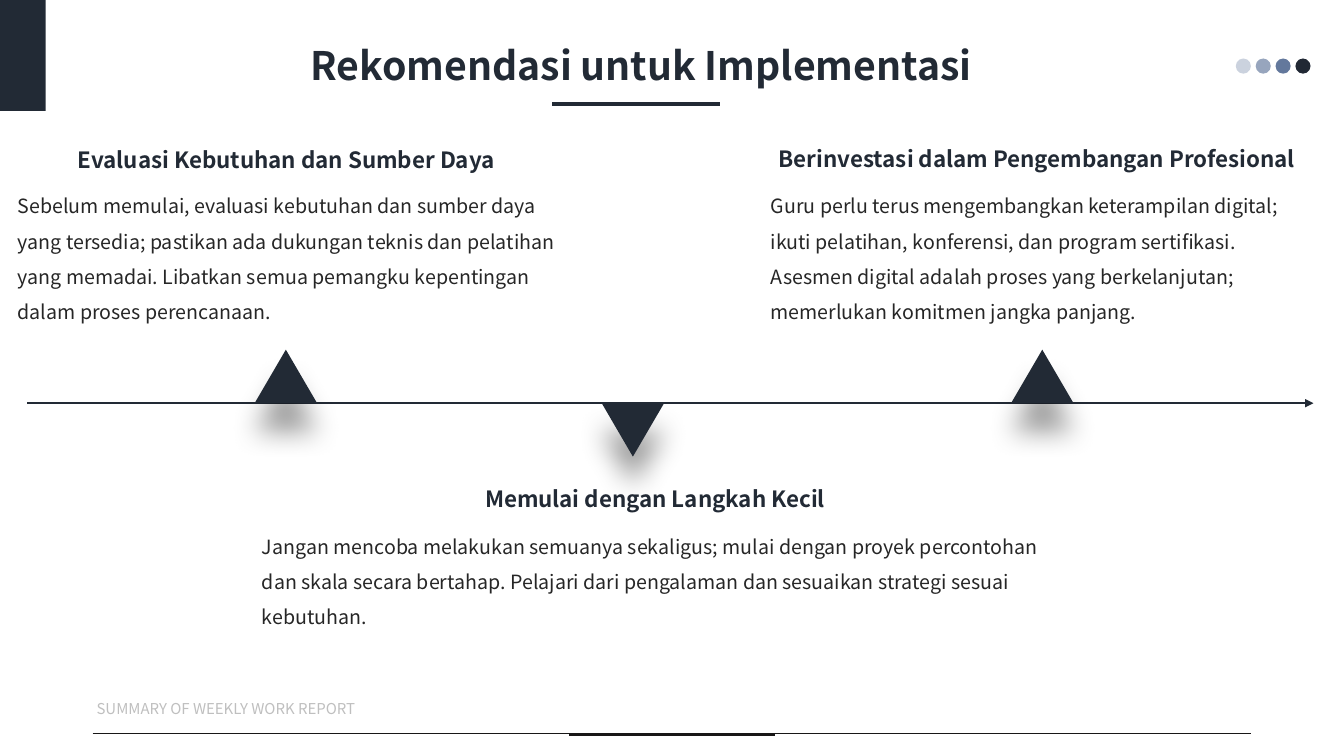
import pptx
import pptx.util
import pptx.dml.color
import pptx.enum.shapes
import pptx.enum.text
from lxml import etree

Pt = pptx.util.Pt
SHAPES = pptx.enum.shapes.MSO_SHAPE
ALIGN = pptx.enum.text.PP_ALIGN
ANCHOR = pptx.enum.text.MSO_ANCHOR

FONT = "Noto Sans CJK SC"
NAVY, BODY, GREY, INK = "222A35", "262626", "BFBFBF", "181717"

# Content
TITLE = "Rekomendasi untuk Implementasi"
FOOTER = "SUMMARY OF WEEKLY WORK REPORT"
# heading, body, left, heading top, body top, body height, width, marker left, marker below axis
STEPS = [
    ("Evaluasi Kebutuhan dan Sumber Daya",
     "Sebelum memulai, evaluasi kebutuhan dan sumber daya yang tersedia; pastikan ada "
     "dukungan teknis dan pelatihan yang memadai. Libatkan semua pemangku kepentingan "
     "dalam proses perencanaan.",
     5.6, 100.8, 126.9, 93, 398, 181.9, False),
    ("Memulai dengan Langkah Kecil",
     "Jangan mencoba melakukan semuanya sekaligus; mulai dengan proyek percontohan dan "
     "skala secara bertahap. Pelajari dari pengalaman dan sesuaikan strategi sesuai "
     "kebutuhan.",
     180, 342.7, 370.1, 64, 576, 429.8, True),
    ("Berinvestasi dalam Pengembangan Profesional",
     "Guru perlu terus mengembangkan keterampilan digital; ikuti pelatihan, konferensi, "
     "dan program sertifikasi. Asesmen digital adalah proses yang berkelanjutan; "
     "memerlukan komitmen jangka panjang.",
     543.4, 100.1, 126.9, 93, 394.6, 722.2, False),
]
DOT_COLOURS = ["CBD2DE", "97A5BD", "63789C", "212834"]
AXIS_Y = 288
MARKER_W, MARKER_H = 44.6, 38.2
DOT_LEFT, DOT_TOP, DOT_SIZE, DOT_STEP = 882.7, 41.8, 10.8, 14.2


def colour(hex_string):
    return pptx.dml.color.RGBColor.from_string(hex_string)


def add_xml(parent, tag, **attributes):
    child = etree.SubElement(parent, pptx.oxml.ns.qn(tag))
    for key, value in attributes.items():
        child.set(key, str(value))
    return child


def write(box, text, size, hex_string, align, bold=False, spacing=None):
    frame = box.text_frame
    frame.word_wrap = True
    frame.text = text
    paragraph = frame.paragraphs[0]
    paragraph.alignment = align
    if spacing:
        paragraph.line_spacing = spacing
    font = paragraph.runs[0].font
    font.name, font.size, font.bold = FONT, Pt(size), bold
    font.color.rgb = colour(hex_string)


def add_text(left, top, width, height, *style, **options):
    box = slide.shapes.add_textbox(Pt(left), Pt(top), Pt(width), Pt(height))
    write(box, *style, **options)
    box.text_frame.auto_size = pptx.enum.text.MSO_AUTO_SIZE.SHAPE_TO_FIT_TEXT


def add_shape(kind, left, top, width, height, hex_string):
    shape = slide.shapes.add_shape(kind, Pt(left), Pt(top), Pt(width), Pt(height))
    shape.fill.solid()
    shape.fill.fore_color.rgb = colour(hex_string)
    shape.line.fill.background()
    shape.shadow.inherit = False
    return shape


def add_rule(x1, x2, y, hex_string, width, arrow=False):
    rule = slide.shapes.add_connector(
        pptx.enum.shapes.MSO_CONNECTOR.STRAIGHT, Pt(x1), Pt(y), Pt(x2), Pt(y))
    rule.line.color.rgb = colour(hex_string)
    rule.line.width = Pt(width)
    if arrow:
        add_xml(rule.line._get_or_add_ln(), "a:tailEnd", type="triangle")
    add_xml(rule._element.spPr, "a:effectLst")


def add_marker(left, below):
    top = AXIS_Y if below else AXIS_Y - MARKER_H
    marker = add_shape(SHAPES.ISOSCELES_TRIANGLE, left, top, MARKER_W, MARKER_H, NAVY)
    properties = marker._element.spPr
    if below:
        properties.xfrm.set("flipV", "1")
    effects = properties.find(pptx.oxml.ns.qn("a:effectLst"))
    shadow = add_xml(effects, "a:outerShdw", blurRad=Pt(20), dist=Pt(20),
                     dir=90 * 60000, algn="t", rotWithShape=0)
    add_xml(add_xml(shadow, "a:srgbClr", val="000000"), "a:alpha", val=40000)


deck = pptx.Presentation()
deck.slide_width, deck.slide_height = Pt(960), Pt(540)
slide = deck.slides.add_slide(deck.slide_layouts[5])

# Title with its underline
title = slide.shapes.title
title.left, title.top, title.width, title.height = Pt(32.4), Pt(25.9), Pt(851), Pt(41)
write(title, TITLE, 28, NAVY, ALIGN.CENTER, bold=True)
title.text_frame.vertical_anchor = ANCHOR.MIDDLE
add_rule(394.6, 514.1, 74.2, NAVY, 3)

# Corner block and dots
add_shape(SHAPES.RECTANGLE, 0, 0, 32.6, 79.2, NAVY)
for index, dot_colour in enumerate(DOT_COLOURS):
    add_shape(SHAPES.OVAL, DOT_LEFT + index * DOT_STEP, DOT_TOP,
              DOT_SIZE, DOT_SIZE, dot_colour)

# Timeline
add_rule(19.4, 938.2, AXIS_Y, NAVY, 1.5, arrow=True)
for heading, body, left, heading_top, body_top, body_h, width, marker_left, below in STEPS:
    add_text(left, heading_top, width, 26.6, heading, 16, NAVY, ALIGN.CENTER, bold=True)
    add_text(left, body_top, width, body_h, body, 14, BODY, ALIGN.LEFT, spacing=1.5)
    add_marker(marker_left, below)

# Footer
add_text(61.9, 496.1, 836.6, 20.2, FOOTER, 10.7, GREY, ALIGN.JUSTIFY)
add_rule(66.2, 893.5, 524.2, INK, 0.5)
add_rule(406.1, 553.7, 524.9, INK, 2.25)

deck.save("out.pptx")
